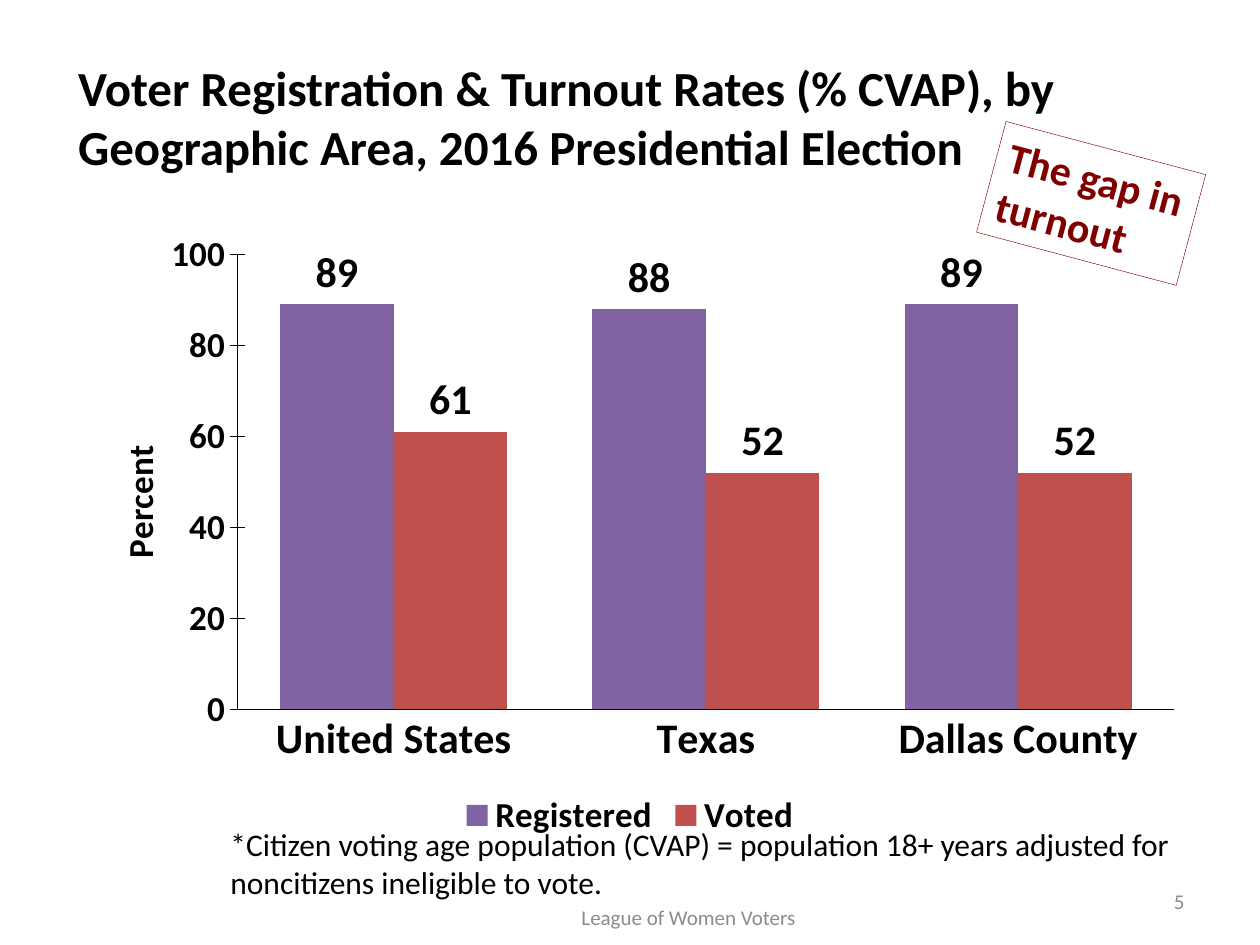
import pptx
import pptx.chart.data
import pptx.dml.color
import pptx.enum.chart
import pptx.enum.shapes
import pptx.enum.text
import pptx.oxml.ns
import pptx.util
from lxml import etree

Inches, Pt = pptx.util.Inches, pptx.util.Pt
RGBColor = pptx.dml.color.RGBColor
qn = pptx.oxml.ns.qn
Align, Anchor = pptx.enum.text.PP_ALIGN, pptx.enum.text.MSO_ANCHOR

# Content
TITLE = "Voter Registration & Turnout Rates (% CVAP), by Geographic Area, 2016 Presidential Election"
AREAS = ["United States", "Texas", "Dallas County"]
PURPLE, RED = RGBColor(0x80, 0x64, 0xA2), RGBColor(0xC0, 0x50, 0x4D)
RATES = [("Registered", (89, 88, 89), PURPLE), ("Voted", (61, 52, 52), RED)]
CALLOUT = ["The gap in", "turnout"]
FOOTNOTE = ["*Citizen voting age population (CVAP) = population 18+ years adjusted for",
            "noncitizens ineligible to vote."]
FOOTER, PAGE = "League of Women Voters", "5"

BLACK, MAROON = RGBColor(0, 0, 0), RGBColor(0x80, 0, 0)
GREY = RGBColor(0x8C, 0x8C, 0x8C)
FONT = "Calibri"


def style(font, size, color=BLACK, bold=False):
    font.name, font.size, font.bold = FONT, Pt(size), bold
    font.color.rgb = color


def write(shape, lines, size, color=BLACK, bold=False, align=Align.LEFT,
          anchor=Anchor.TOP, wrap=False):
    frame = shape.text_frame
    frame.word_wrap, frame.vertical_anchor = wrap, anchor
    for i, line in enumerate(lines):
        paragraph = frame.add_paragraph() if i else frame.paragraphs[0]
        paragraph.text, paragraph.alignment = line, align
        style(paragraph.font, size, color, bold)


def place(element, index, **settings):
    """Give a chart part a manual layout, as fractions of the chart."""
    layout = element.find(qn("c:layout"))
    if layout is None:
        layout = etree.Element(qn("c:layout"))
        element.insert(index, layout)
    manual = etree.SubElement(layout, qn("c:manualLayout"))
    for tag, value in settings.items():
        etree.SubElement(manual, qn(f"c:{tag}")).set("val", str(value))


deck = pptx.Presentation()
deck.slide_width, deck.slide_height = Inches(10), Inches(7.5)
slide = deck.slides.add_slide(deck.slide_layouts[5])

# Title
title = slide.shapes.title
title.left, title.top = Inches(0.52), Inches(0.3)
title.width, title.height = Inches(8.98), Inches(1.25)
write(title, [TITLE], 28, bold=True, anchor=Anchor.MIDDLE, wrap=True)

# Chart
data = pptx.chart.data.CategoryChartData(number_format="0")
data.categories = AREAS
for name, values, _ in RATES:
    data.add_series(name, values)
chart = slide.shapes.add_chart(
    pptx.enum.chart.XL_CHART_TYPE.COLUMN_CLUSTERED,
    Inches(0.5), Inches(1.75), Inches(9), Inches(4.95), data).chart
style(chart.font, 18)
chart.has_title = False
plot = chart.plots[0]
plot.gap_width, plot.overlap, plot.vary_by_categories = 75, 0, False
for series, (_, _, color) in zip(plot.series, RATES):
    series.format.fill.solid()
    series.format.fill.fore_color.rgb = color
    labels = series.data_labels
    labels.show_value, labels.number_format = True, "0"
    labels.number_format_is_linked = False
    labels.position = pptx.enum.chart.XL_LABEL_POSITION.OUTSIDE_END
    style(labels.font, 24, bold=True)

# Axes
tick = pptx.enum.chart.XL_TICK_MARK
area_axis, rate_axis = chart.category_axis, chart.value_axis
for axis, size, mark in ((area_axis, 24, tick.NONE), (rate_axis, 20, tick.CROSS)):
    axis.major_tick_mark, axis.minor_tick_mark = mark, tick.NONE
    axis.has_major_gridlines = False
    axis.format.line.color.rgb, axis.format.line.width = BLACK, Pt(0.25)
    style(axis.tick_labels.font, size, bold=True)
rate_axis.minimum_scale, rate_axis.maximum_scale, rate_axis.major_unit = 0, 100, 20
rate_axis.tick_labels.number_format = "0"
rate_axis.tick_labels.number_format_is_linked = False
percent = rate_axis.axis_title.text_frame.paragraphs[0]
percent.text = "Percent"
style(percent.font, 20, bold=True)
place(rate_axis.axis_title._element, 1, xMode="edge", yMode="edge", x=0.04, y=0.35)
place(chart._chartSpace.chart.plotArea, 0, layoutTarget="inner", xMode="edge",
      yMode="edge", x=0.154, y=0.054, w=0.826, h=0.73)

# Legend
chart.has_legend = True
chart.legend.position = pptx.enum.chart.XL_LEGEND_POSITION.BOTTOM
chart.legend.include_in_layout = False
style(chart.legend.font, 20, bold=True)

# Tilted callout
callout = slide.shapes.add_shape(pptx.enum.shapes.MSO_SHAPE.RECTANGLE, Inches(7.84),
                                 Inches(1.16), Inches(1.64), Inches(0.91))
callout.rotation = 14.9
callout.shadow.inherit = False
callout.fill.background()
callout.line.color.rgb, callout.line.width = MAROON, Pt(0.25)
write(callout, CALLOUT, 24, MAROON, bold=True)

# Page number, footer and footnote
for box, lines, options in (
        ((7.17, 6.95, 2.33, 0.4), [PAGE],
         dict(size=12, color=GREY, align=Align.RIGHT, anchor=Anchor.MIDDLE, wrap=True)),
        ((3.68, 7.08, 3.57, 0.4), [FOOTER],
         dict(size=12, color=GREY, align=Align.CENTER, anchor=Anchor.MIDDLE, wrap=True)),
        ((1.73, 6.5, 7.78, 0.71), FOOTNOTE, dict(size=18))):
    write(slide.shapes.add_textbox(*map(Inches, box)), lines, **options)

deck.save("out.pptx")
